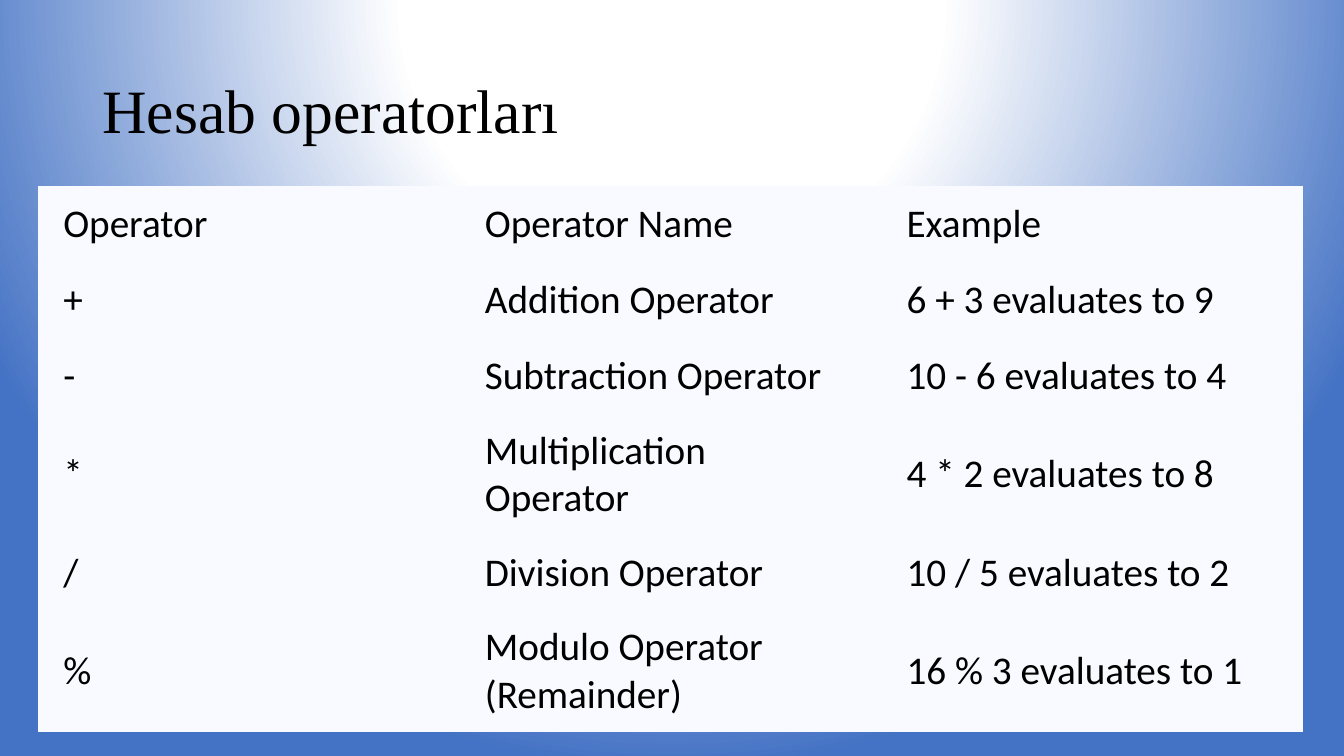
from lxml import etree
from pptx import Presentation
from pptx.dml.color import RGBColor
from pptx.enum import text
from pptx.oxml import parse_xml
from pptx.oxml.ns import nsdecls, qn
from pptx.util import Pt

TITLE = "Hesab operatorları"
ROWS = [
    ("Operator", "Operator Name", "Example"),
    ("+", "Addition Operator", "6 + 3 evaluates to 9"),
    ("-", "Subtraction Operator", "10 - 6 evaluates to 4"),
    ("*", "Multiplication Operator", "4 * 2 evaluates to 8"),
    ("/", "Division Operator", "10 / 5 evaluates to 2"),
    ("%", "Modulo Operator (Remainder)", "16 % 3 evaluates to 1"),
]
TWO_LINE_ROWS = {3, 5}
COLORS = {"text": "000000", "cell": "F8FAFF", "center": "FFFFFF", "edge": "4472C4"}
NO_TABLE_STYLE = "{2D5ABB26-0587-4C30-8999-92F81FD0307C}"
COLUMN_WIDTH = 301.2
ROW_HEIGHT, TALL_ROW_HEIGHT = 54.2, 83.5


def set_font(p, name, size):
    p.font.name = name
    p.font.size = Pt(size)
    p.font.color.rgb = RGBColor.from_string(COLORS["text"])


def set_background(slide):
    """Fill the background with a circular gradient centred above the slide."""
    slide.background.fill.gradient()
    old = slide.element.find(".//" + qn("a:gradFill"))
    stops = [(0, "center"), (35, "center"), (100, "edge")]
    stop_xml = "".join(
        f'<a:gs pos="{pos * 1000}"><a:srgbClr val="{COLORS[key]}"/></a:gs>'
        for pos, key in stops)
    old.getparent().replace(old, parse_xml(
        f'<a:gradFill {nsdecls("a")} rotWithShape="1"><a:gsLst>{stop_xml}</a:gsLst>'
        '<a:path path="circle">'
        '<a:fillToRect l="50000" t="-80000" r="50000" b="180000"/>'
        '</a:path></a:gradFill>'))


def add_title(slide):
    title = slide.shapes.title
    title.left, title.top, title.width, title.height = Pt(66), Pt(28.8), Pt(828), Pt(104.4)
    tf = title.text_frame
    tf.text = TITLE
    tf.word_wrap = True
    tf.vertical_anchor = text.MSO_ANCHOR.MIDDLE
    p = tf.paragraphs[0]
    p.alignment = text.PP_ALIGN.LEFT
    p.line_spacing = 0.9
    set_font(p, "Times New Roman", 44)


def add_operator_table(slide):
    heights = [TALL_ROW_HEIGHT if i in TWO_LINE_ROWS else ROW_HEIGHT
               for i in range(len(ROWS))]
    columns = len(ROWS[0])
    frame = slide.shapes.add_table(len(ROWS), columns, Pt(27.2), Pt(133.2),
                                   Pt(COLUMN_WIDTH * columns), Pt(sum(heights)))
    table = frame.table
    table.first_row = table.horz_banding = False
    frame.element.find(".//" + qn("a:tableStyleId")).text = NO_TABLE_STYLE
    for column in table.columns:
        column.width = Pt(COLUMN_WIDTH)
    for row, height, values in zip(table.rows, heights, ROWS):
        row.height = Pt(height)
        for cell, value in zip(row.cells, values):
            cell.text = value
            cell.fill.solid()
            cell.fill.fore_color.rgb = RGBColor.from_string(COLORS["cell"])
            cell.vertical_anchor = text.MSO_ANCHOR.MIDDLE
            cell.margin_left = cell.margin_right = Pt(18)
            cell.margin_top = cell.margin_bottom = Pt(9)
            set_font(cell.text_frame.paragraphs[0], "Calibri", 28)


def main():
    prs = Presentation()
    prs.slide_width, prs.slide_height = Pt(960), Pt(540)
    slide = prs.slides.add_slide(prs.slide_layouts[5])
    set_background(slide)
    add_title(slide)
    add_operator_table(slide)
    prs.save("out.pptx")


if __name__ == "__main__":
    main()
